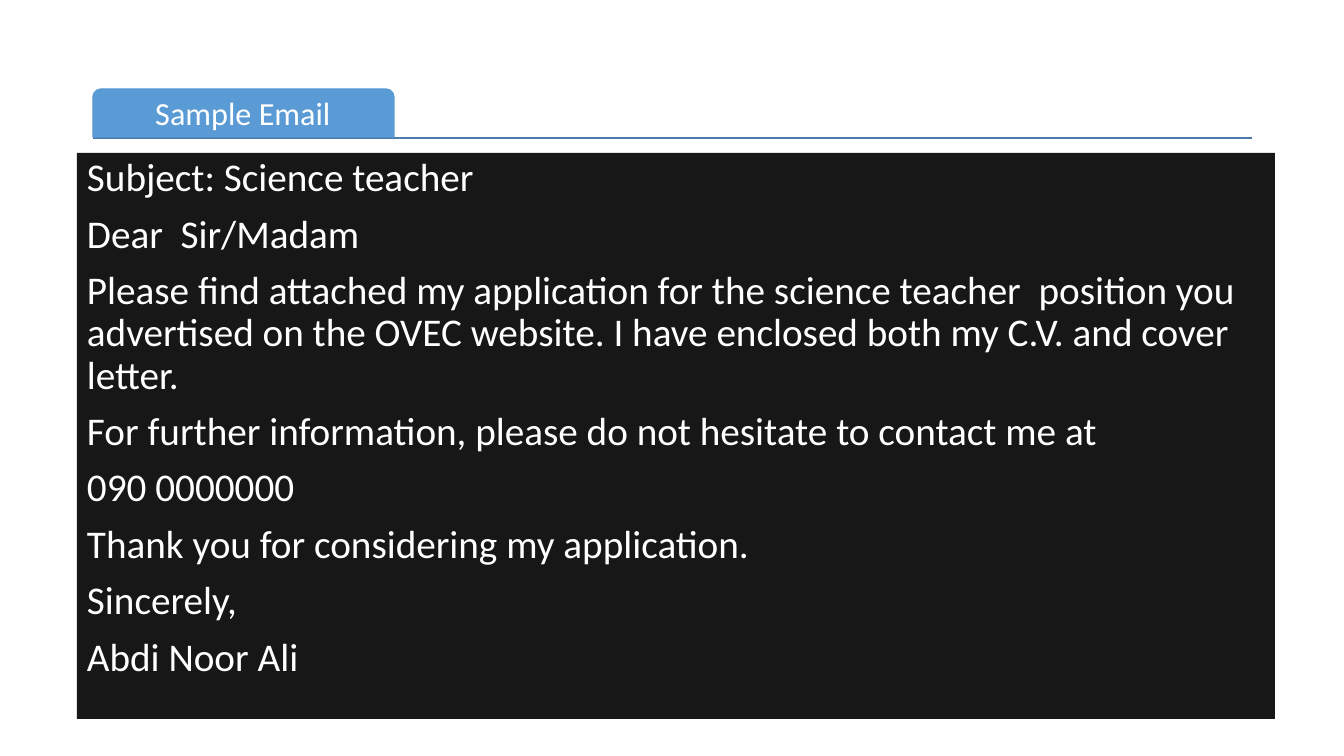
from pptx import Presentation
from pptx import util as u
from pptx.dml.color import RGBColor
from pptx.enum import shapes, text
from lxml import etree

SCALE = 12192000 / 1344  # EMU per px
A = "{http://schemas.openxmlformats.org/drawingml/2006/main}"


def px(*lengths):
    return [u.Emu(round(n * SCALE)) for n in lengths]


def paint(color_format, hex_color):
    color_format.rgb = RGBColor.from_string(hex_color)


prs = Presentation()
prs.slide_width, prs.slide_height = px(1344, 756)
s = prs.slides.add_slide(prs.slide_layouts[1])
title, body = s.placeholders

# Rule under the tab
rule = s.shapes.add_connector(shapes.MSO_CONNECTOR.STRAIGHT, *px(93, 138, 1252, 138))
paint(rule.line.color, "497CAB")
rule.line.width = u.Pt(1)
etree.SubElement(rule.line._get_or_add_ln().getparent(), A + "effectLst")

# Blue tab
tab = s.shapes.add_shape(shapes.MSO_SHAPE.ROUND_2_SAME_RECTANGLE, *px(93, 89, 301, 48))
tab.adjustments[0] = 0.167
tab.shadow.inherit = False
tab.fill.solid()
paint(tab.fill.fore_color, "5B9BD5")
paint(tab.line.color, "5B9BD5")
tab.line.width = u.Pt(1)

# Title and email go in front of the tab
email = [
    "Subject: Science teacher",
    "Dear  Sir/Madam",
    "Please find attached my application for the science teacher  position you "
    "advertised on the OVEC website. I have enclosed both my C.V. and cover letter.",
    "For further information, please do not hesitate to contact me at",
    "090 0000000",
    "Thank you for considering my application.",
    "Sincerely,",
    "Abdi Noor Ali",
]
blocks = [
    (title, (95, 92, 296, 46), ["Sample Email"], 23, 5,
     {"alignment": text.PP_ALIGN.CENTER, "space_before": u.Pt(0)},
     text.MSO_ANCHOR.MIDDLE),
    (body, (77, 153, 1198, 566), email, 28, 10,
     {"alignment": text.PP_ALIGN.LEFT, "space_before": u.Pt(10)},
     text.MSO_ANCHOR.TOP),
]
for sp, box, lines, size, inset, formats, anchor in blocks:
    s.shapes._spTree.append(sp._element)
    sp.left, sp.top, sp.width, sp.height = px(*box)
    tf = sp.text_frame
    tf.word_wrap = True
    tf.auto_size = text.MSO_AUTO_SIZE.NONE
    tf.vertical_anchor = anchor
    tf.margin_left, tf.margin_top, tf.margin_right, tf.margin_bottom = px(inset, 5, inset, 5)
    tf.text = "\n".join(lines)
    for p in tf.paragraphs:
        for name, value in {**formats, "line_spacing": 0.9}.items():
            setattr(p, name, value)
        pPr = p._p.get_or_add_pPr()
        pPr.set("marL", "0")
        pPr.set("indent", "0")
        etree.SubElement(pPr, A + "buNone")
        font = p.runs[0].font
        font.name, font.size = "Calibri", u.Pt(size)
        paint(font.color, "FFFFFF")

# Dark email panel
body.fill.solid()
paint(body.fill.fore_color, "181717")

prs.save("out.pptx")
